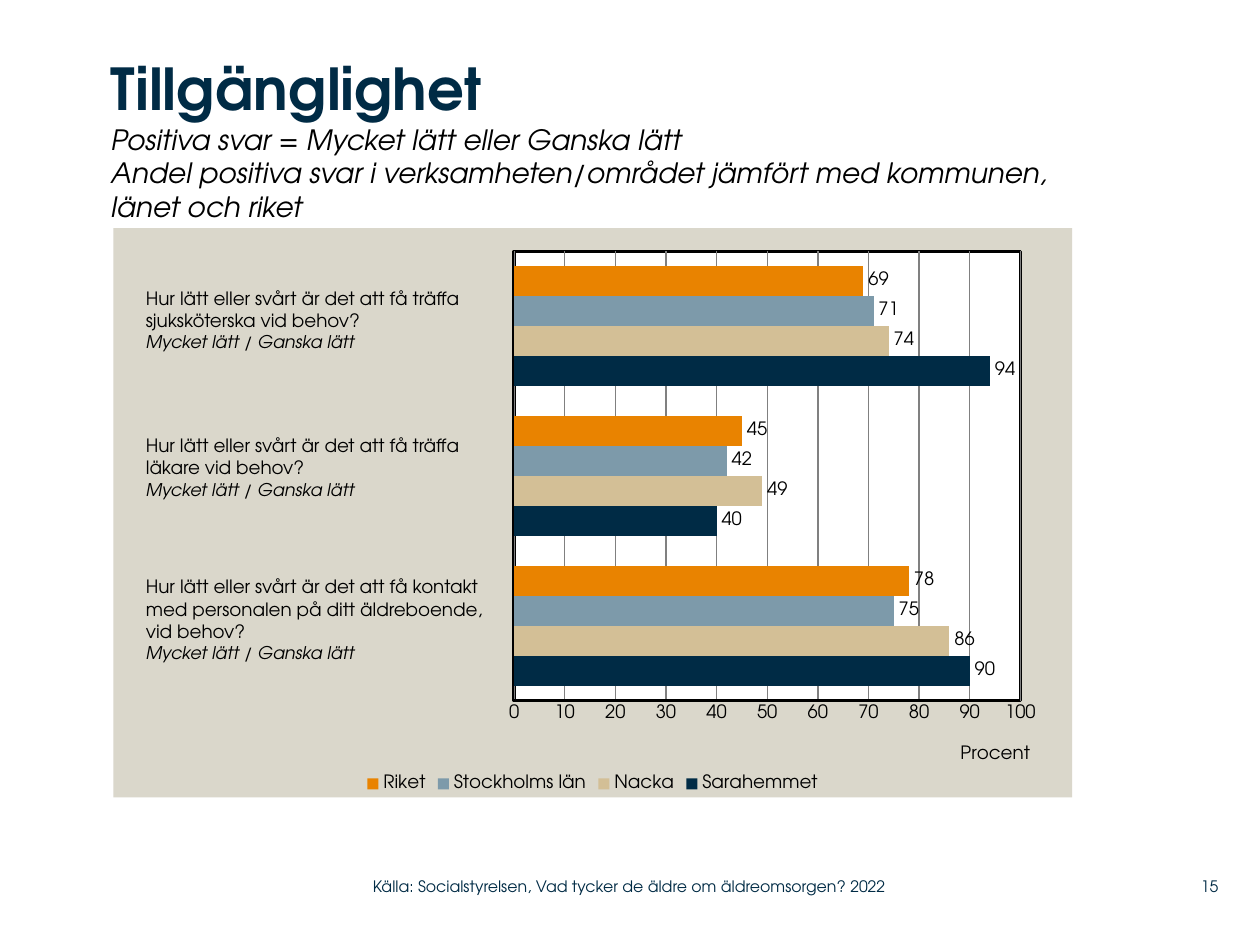
from lxml import etree
from pptx import Presentation
from pptx.chart.data import CategoryChartData
from pptx.dml.color import RGBColor
from pptx.enum.chart import XL_CHART_TYPE as CT, XL_LABEL_POSITION as LP
from pptx.enum.chart import XL_LEGEND_POSITION as LEG, XL_TICK_MARK as TICK
from pptx.enum.text import MSO_ANCHOR as ANCHOR, MSO_AUTO_SIZE as AUTO, PP_ALIGN as AL
from pptx.oxml import parse_xml
from pptx.oxml.ns import nsdecls, qn
from pptx.util import Pt

FACE = "TeX Gyre Adventor"
NAVY, BLACK, WHITE, GREY, BEIGE = "002B45", "000000", "FFFFFF", "808080", "DAD7CB"

TITLE = "Tillgänglighet"
SUBTITLE = ("Positiva svar = Mycket lätt eller Ganska lätt\v"
            "Andel positiva svar i verksamheten/området jämfört med kommunen, länet och riket")
SERIES = [
    ("Sarahemmet", NAVY, (90, 40, 94)),
    ("Nacka", "D3BF96", (86, 49, 74)),
    ("Stockholms län", "7D9AAA", (75, 42, 71)),
    ("Riket", "E98300", (78, 45, 69)),
]
ANSWERS = "Mycket lätt / Ganska lätt"
QUESTIONS = [  # top, width, height, lines
    (160.6, 215.3, 58.3, ["Hur lätt eller svårt är det att få träffa sjuksköterska vid behov?"]),
    (244.8, 211, 58.3, ["Hur lätt eller svårt är det att få träffa", "läkare vid behov?"]),
    (325.4, 216.7, 70.6, ["Hur lätt eller svårt är det att få kontakt",
                          "med personalen på ditt äldreboende,", "vid behov?"]),
]
FOOTERS = [  # left, width, alignment, text
    (213.1, 319, AL.LEFT, "Källa: Socialstyrelsen, Vad tycker de äldre om äldreomsorgen? 2022"),
    (662.4, 33.8, AL.RIGHT, "15"),
]


def rgb(color):
    return RGBColor.from_string(color)


def set_font(font, size, color=BLACK, bold=False, italic=False):
    font.name, font.size, font.bold, font.italic = FACE, Pt(size), bold, italic
    font.color.rgb = rgb(color)


def no_insets(tf):
    tf.margin_left = tf.margin_right = tf.margin_top = tf.margin_bottom = 0


def add_text(left, top, width, height):
    tf = s.shapes.add_textbox(Pt(left), Pt(top), Pt(width), Pt(height)).text_frame
    tf.word_wrap = True
    return tf


def area_format(color, line=""):
    return parse_xml(f'<c:spPr {nsdecls("c", "a")}><a:solidFill><a:srgbClr val="{color}"/>'
                     f'</a:solidFill><a:ln{line}</a:ln></c:spPr>')


def set_layout(parent, index, target=None, **place):
    """Place a chart part by fractions of the chart's size."""
    for old in parent.findall(qn("c:layout")):
        parent.remove(old)
    layout = etree.Element(qn("c:layout"))
    manual = etree.SubElement(layout, qn("c:manualLayout"))
    items = {"layoutTarget": target} if target else {}
    items.update(xMode="edge", yMode="edge", **place)
    for tag, value in items.items():
        etree.SubElement(manual, qn("c:" + tag)).set("val", str(value))
    parent.insert(index, layout)


prs = Presentation()
prs.slide_width, prs.slide_height = Pt(720), Pt(540)
s = prs.slides.add_slide(prs.slide_layouts[5])

title = s.shapes.title
title.left, title.top, title.width, title.height = Pt(63.4), Pt(30.2), Pt(559.4), Pt(100)
tf = title.text_frame
no_insets(tf)
tf.word_wrap, tf.auto_size, tf.vertical_anchor = True, AUTO.NONE, ANCHOR.TOP
p = tf.paragraphs[0]
p.alignment = AL.LEFT
r = p.add_run()
r.text = TITLE
set_font(r.font, 33, NAVY, bold=True)
for line in SUBTITLE.split("\v"):
    p.add_line_break()
    r = p.add_run()
    r.text = line
    set_font(r.font, 16, italic=True)

data = CategoryChartData()
data.categories = ["1", "2", "3"]
for name, _, values in SERIES:
    data.add_series(name, values)
chart = s.shapes.add_chart(CT.BAR_CLUSTERED, Pt(64.8), Pt(130.3), Pt(547.9), Pt(325.4), data).chart
set_font(chart.font, 10.5)
chart.has_title = False
chart.has_legend = True
chart.legend.position, chart.legend.include_in_layout = LEG.BOTTOM, False
set_font(chart.legend.font, 10.5)

plot = chart.plots[0]
plot.gap_width, plot.overlap, plot.vary_by_categories = 100, 0, False
plot.has_data_labels = True
labels = plot.data_labels
labels.show_value, labels.position = True, LP.OUTSIDE_END
set_font(labels.font, 10.5)
for series, (_, color, _) in zip(plot.series, SERIES):
    series.format.fill.solid()
    series.format.fill.fore_color.rgb = rgb(color)

chart.category_axis.visible = False
axis = chart.value_axis
axis.minimum_scale, axis.maximum_scale, axis.major_unit = 0, 100, 10
axis.major_tick_mark = axis.minor_tick_mark = TICK.NONE
axis.format.line.color.rgb, axis.format.line.width = rgb(BLACK), Pt(2)
axis.has_major_gridlines = True
grid = axis.major_gridlines.format.line
grid.color.rgb, grid.width = rgb(GREY), Pt(0.75)
axis.axis_title.text_frame.text = "Procent"
set_font(axis.axis_title.text_frame.paragraphs[0].font, 10.5)

chart_xml = chart._chartSpace.find(qn("c:chart"))
plot_area = chart_xml.find(qn("c:plotArea"))
set_layout(plot_area, 0, "inner", x=0.418, y=0.041, w=0.528, h=0.789)
set_layout(axis.axis_title._element, 1, x=0.88, y=0.9)
chart_xml.addnext(area_format(BEIGE, "><a:noFill/>"))
plot_area.append(area_format(
    WHITE, f' w="{Pt(2)}"><a:solidFill><a:srgbClr val="{BLACK}"/></a:solidFill>'))

for top, width, height, lines in QUESTIONS:
    tf = add_text(76.3, top, width, height)
    tf.text = "\n".join(lines + [ANSWERS])
    for p in tf.paragraphs:
        set_font(p.font, 10.5)
    set_font(p.font, 10, italic=True)

for left, width, align, text in FOOTERS:
    tf = add_text(left, 496, width, 21)
    no_insets(tf)
    tf.vertical_anchor = ANCHOR.MIDDLE
    tf.text = text
    tf.paragraphs[0].alignment = align
    set_font(tf.paragraphs[0].font, 9, NAVY)

prs.save("out.pptx")
